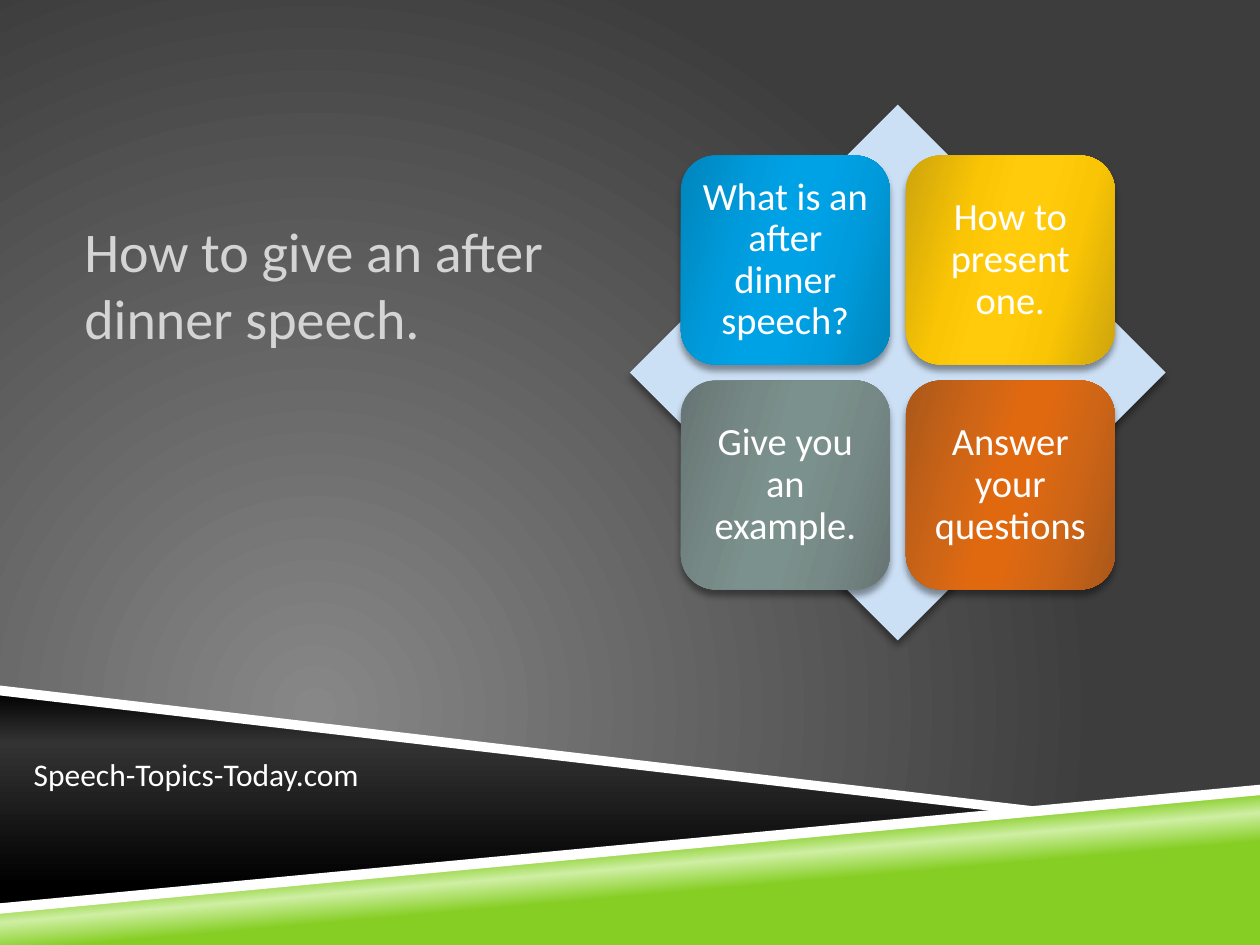
from pptx import Presentation
from pptx.dml.color import RGBColor
from pptx.enum.shapes import MSO_SHAPE
from pptx.enum.text import MSO_ANCHOR, PP_ALIGN
from pptx.oxml import parse_xml
from pptx.oxml.ns import nsdecls, qn
from pptx.util import Cm, Pt

DIAMOND = MSO_SHAPE.DIAMOND
ROUNDED = MSO_SHAPE.ROUNDED_RECTANGLE
MIDDLE, BOTTOM = MSO_ANCHOR.MIDDLE, MSO_ANCHOR.BOTTOM
CENTER, LEFT = PP_ALIGN.CENTER, PP_ALIGN.LEFT

FONT = "Calibri"
WHITE = RGBColor(0xFF, 0xFF, 0xFF)
BLACK = RGBColor(0x00, 0x00, 0x00)
CHARCOAL = RGBColor(0x33, 0x33, 0x33)
BACK_LIGHT = RGBColor(0x87, 0x87, 0x87)
BACK_DARK = RGBColor(0x3D, 0x3D, 0x3D)
TITLE_GRAY = RGBColor(0xD4, 0xD4, 0xD4)
GREEN = RGBColor(0x86, 0xCE, 0x24)
PALE_GREEN = RGBColor(0xCF, 0xEF, 0xA4)
PALE_BLUE = RGBColor(0xCC, 0xE0, 0xF5)

# Edge, middle and centre colour of each tile
BLUES = RGBColor(0x00, 0x85, 0xBC), RGBColor(0x00, 0x9B, 0xDC), RGBColor(0x00, 0xA2, 0xE6)
YELLOWS = RGBColor(0xCD, 0xA4, 0x0D), RGBColor(0xFA, 0xC5, 0x04), RGBColor(0xFF, 0xCB, 0x0B)
GRAYS = RGBColor(0x66, 0x75, 0x73), RGBColor(0x77, 0x89, 0x86), RGBColor(0x7B, 0x91, 0x8D)
ORANGES = RGBColor(0xAA, 0x58, 0x1A), RGBColor(0xCF, 0x65, 0x16), RGBColor(0xE0, 0x69, 0x10)

TILES = [
    ("What is an after dinner speech?", BLUES),
    ("How to present one.", YELLOWS),
    ("Give you an example.", GRAYS),
    ("Answer your questions", ORANGES),
]


def gradient_xml(stops, shade):
    """Gradient fill from (percent, colour) stops and a shade element."""
    marks = "".join(
        f'<a:gs pos="{percent * 1000}"><a:srgbClr val="{color}"/></a:gs>'
        for percent, color in stops
    )
    return (f'<a:gradFill {nsdecls("a")} rotWithShape="1">'
            f"<a:gsLst>{marks}</a:gsLst>{shade}</a:gradFill>")


def fill_gradient(shape, stops, angle):
    shape.fill.background()
    properties = shape.element.spPr
    shade = f'<a:lin ang="{angle * 60000}" scaled="0"/>'
    properties.replace(properties.find(qn("a:noFill")),
                       parse_xml(gradient_xml(stops, shade)))


def fill_solid(shape, color):
    shape.fill.solid()
    shape.fill.fore_color.rgb = color


def remove_outline(shape):
    shape.line.fill.background()
    shape.shadow.inherit = False


def add_shadow(shape):
    effects = shape.element.spPr.find(qn("a:effectLst"))
    effects.append(parse_xml(
        f'<a:outerShdw {nsdecls("a")} blurRad="{Pt(4)}" dist="{Pt(3.3)}" '
        'dir="5400000" algn="ctr" rotWithShape="0">'
        f'<a:srgbClr val="{BLACK}"><a:alpha val="40000"/></a:srgbClr></a:outerShdw>'
    ))


def write_text(shape, text, size, color, align=LEFT):
    frame = shape.text_frame
    frame.word_wrap = True
    frame.text = text
    para = frame.paragraphs[0]
    para.alignment = align
    para.font.name = FONT
    para.font.size = Pt(size)
    para.font.color.rgb = color
    return frame


def set_margins(frame, side, end):
    frame.margin_left = frame.margin_right = side
    frame.margin_top = frame.margin_bottom = end


def add_background(page):
    shade = ('<a:path path="circle">'
             '<a:fillToRect l="50000" t="100000" r="100000" b="50000"/></a:path>')
    fill = gradient_xml([(0, BACK_LIGHT), (100, BACK_DARK)], shade)
    page.element.cSld.insert(0, parse_xml(
        f'<p:bg {nsdecls("p", "a")}><p:bgPr>{fill}<a:effectLst/></p:bgPr></p:bg>'
    ))


def add_band(page, left, top, points):
    corners = [(left + Cm(x), top + Cm(y)) for x, y in points]
    builder = page.shapes.build_freeform(*corners[0])
    builder.add_line_segments(corners[1:], close=True)
    band = builder.convert_to_shape()
    remove_outline(band)
    return band


def add_footer(page, left, top):
    # Dark wedge and green floor
    wedge = add_band(page, left, top, [(0, 0.1), (20.68, 2.51), (0, 4.47)])
    fill_gradient(wedge, [(0, BLACK), (24, CHARCOAL), (90, BLACK)], 90)
    floor = add_band(page, left, top,
                     [(0, 4.49), (25.4, 2.11), (25.4, 5.23), (0, 5.23)])
    fill_gradient(floor, [(39, GREEN), (50, PALE_GREEN), (58, GREEN)], 265)

    # White stripes along their upper edges
    for points in (
        [(0, 0), (0, 0.2), (20.27, 2.56), (21.31, 2.49)],
        [(25.4, 2), (0, 4.39), (0, 4.6), (25.4, 2.21)],
    ):
        fill_solid(add_band(page, left, top, points), WHITE)

    # Web address
    box = page.shapes.add_textbox(left + Cm(0.43), top + Cm(1.27), Cm(9.73), Cm(1.02))
    write_text(box, "Speech-Topics-Today.com", 18, WHITE)


def add_title(page, left, top, width, height):
    box = page.shapes.add_textbox(left, top, width, height)
    frame = write_text(box, "How to give an after dinner speech.", 32, TITLE_GRAY)
    frame.vertical_anchor = BOTTOM
    set_margins(frame, 0, Cm(0.13))


def add_matrix(page, left, top, size):
    # Diamond behind the tiles
    diamond = page.shapes.add_shape(DIAMOND, left, top, size, size)
    fill_solid(diamond, PALE_BLUE)
    remove_outline(diamond)
    add_shadow(diamond)

    # Two by two tiles, centred on the diamond
    tile_size = int(size * 0.39)
    pitch = int(size * 0.42)
    inset = (size - tile_size - pitch) // 2
    for index, (text, (edge, middle, centre)) in enumerate(TILES):
        row, column = divmod(index, 2)
        tile = page.shapes.add_shape(ROUNDED, left + inset + column * pitch,
                                     top + inset + row * pitch, tile_size, tile_size)
        fill_gradient(tile, [(0, edge), (30, middle), (45, centre),
                             (55, centre), (73, middle), (100, edge)], 16)
        remove_outline(tile)
        add_shadow(tile)
        frame = write_text(tile, text, 22, WHITE, CENTER)
        frame.vertical_anchor = MIDDLE
        set_margins(frame, Cm(0.23), Cm(0.23))
        frame.paragraphs[0].line_spacing = 0.9
        frame.paragraphs[0].space_after = Pt(7.7)


def main():
    deck = Presentation()
    deck.slide_width, deck.slide_height = Cm(25.4), Cm(19.05)
    page = deck.slides.add_slide(deck.slide_layouts[6])
    add_background(page)
    add_footer(page, Cm(0), Cm(13.82))
    add_title(page, Cm(1.7), Cm(2.97), Cm(10.36), Cm(4.24))
    add_matrix(page, Cm(12.7), Cm(2.11), Cm(10.8))
    deck.save("out.pptx")


if __name__ == "__main__":
    main()
